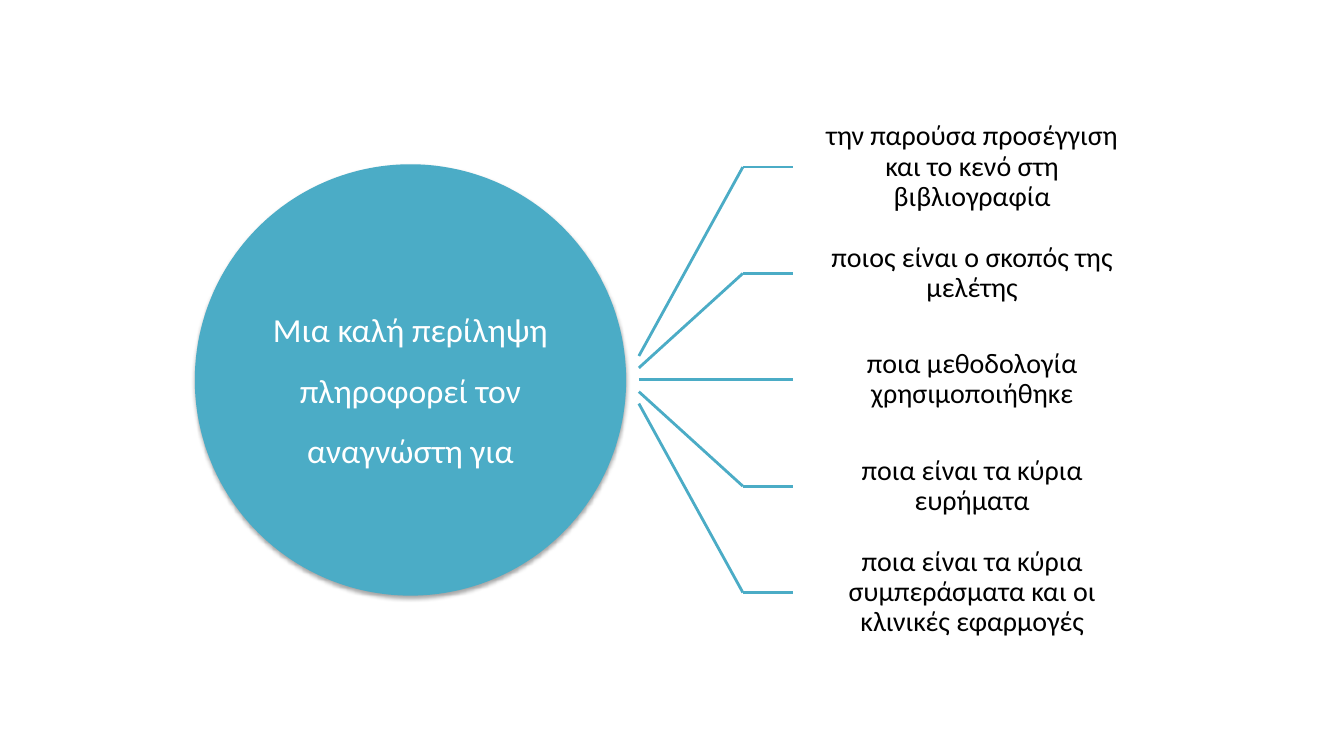
from lxml.etree import SubElement
from pptx import Presentation
from pptx.dml.color import RGBColor
from pptx.enum.shapes import MSO_CONNECTOR, MSO_SHAPE
from pptx.enum.text import MSO_ANCHOR, PP_ALIGN
from pptx.oxml.ns import qn
from pptx.util import Cm, Pt

TEAL = RGBColor(0x4B, 0xAC, 0xC6)
WHITE = RGBColor(0xFF, 0xFF, 0xFF)
BLACK = RGBColor(0, 0, 0)

TOPIC = "Mια καλή περίληψη πληροφορεί τον αναγνώστη για"
POINTS = [
    "την παρούσα προσέγγιση και το κενό στη βιβλιογραφία",
    "ποιος είναι ο σκοπός της μελέτης",
    "ποια μεθοδολογία χρησιμοποιήθηκε",
    "ποια είναι τα κύρια ευρήματα",
    "ποια είναι τα κύρια συμπεράσματα και οι κλινικές εφαρμογές",
]


def write_text(shape, text, size, color, line_spacing, inset):
    """Fill a shape with one centred paragraph."""
    frame = shape.text_frame
    frame.word_wrap = True
    frame.vertical_anchor = MSO_ANCHOR.MIDDLE
    frame.margin_left = frame.margin_right = inset
    frame.margin_top = frame.margin_bottom = inset
    paragraph = frame.paragraphs[0]
    paragraph.text = text
    paragraph.alignment = PP_ALIGN.CENTER
    paragraph.line_spacing = line_spacing
    paragraph.space_after = Pt(size * 0.35)
    paragraph.font.name = "Calibri"
    paragraph.font.size = Pt(size)
    paragraph.font.color.rgb = color


def add_soft_shadow(shape):
    """Give a shape a faint shadow straight below it."""
    effects = shape._element.spPr.find(qn("a:effectLst"))
    shadow = SubElement(effects, qn("a:outerShdw"), blurRad=str(Pt(3.1)),
                        dist=str(Pt(1.8)), dir="5400000", rotWithShape="0")
    color = SubElement(shadow, qn("a:srgbClr"), val="000000")
    SubElement(color, qn("a:alpha"), val="35000")


def add_line(slide, start_x, start_y, end_x, end_y):
    """Draw a straight teal line without a shadow."""
    line = slide.shapes.add_connector(MSO_CONNECTOR.STRAIGHT, start_x, start_y, end_x, end_y)
    line.line.color.rgb = TEAL
    line.line.width = Pt(2)
    SubElement(line._element.spPr, qn("a:effectLst"))
    return line


def add_topic(slide, left, top, diameter):
    """Place the circle with the main statement."""
    circle = slide.shapes.add_shape(MSO_SHAPE.OVAL, left, top, diameter, diameter)
    circle.shadow.inherit = False
    circle.fill.solid()
    circle.fill.fore_color.rgb = TEAL
    circle.line.fill.background()
    add_soft_shadow(circle)
    write_text(circle, TOPIC, 24, WHITE, 1.5, 0)


def add_points(slide, left, top, width, height):
    """Fan lines out from the left edge to a column of points on the right."""
    row_height = height // len(POINTS)
    middle = top + height // 2
    elbow = left + Cm(2.62)
    text_left = left + Cm(3.89)
    for index, point in enumerate(POINTS):
        row_top = top + index * row_height
        row_middle = row_top + row_height // 2
        start_y = middle + (index - len(POINTS) // 2) * Cm(0.3)
        add_line(slide, left, start_y, elbow, row_middle)
        label = slide.shapes.add_textbox(text_left, row_top, left + width - text_left, row_height)
        write_text(label, point, 20, BLACK, 0.9, Cm(0.4))
        stub = add_line(slide, elbow, row_middle, text_left, row_middle)
        stub.end_connect(label, 1)


def main():
    """Build and save the slide."""
    presentation = Presentation()
    presentation.slide_width = Cm(33.87)
    presentation.slide_height = Cm(19.05)
    slide = presentation.slides.add_slide(presentation.slide_layouts[6])
    add_topic(slide, Cm(4.91), Cm(4.14), Cm(10.87))
    add_points(slide, Cm(16.1), Cm(2.87), Cm(12.91), Cm(13.4))
    presentation.save("out.pptx")


if __name__ == "__main__":
    main()
